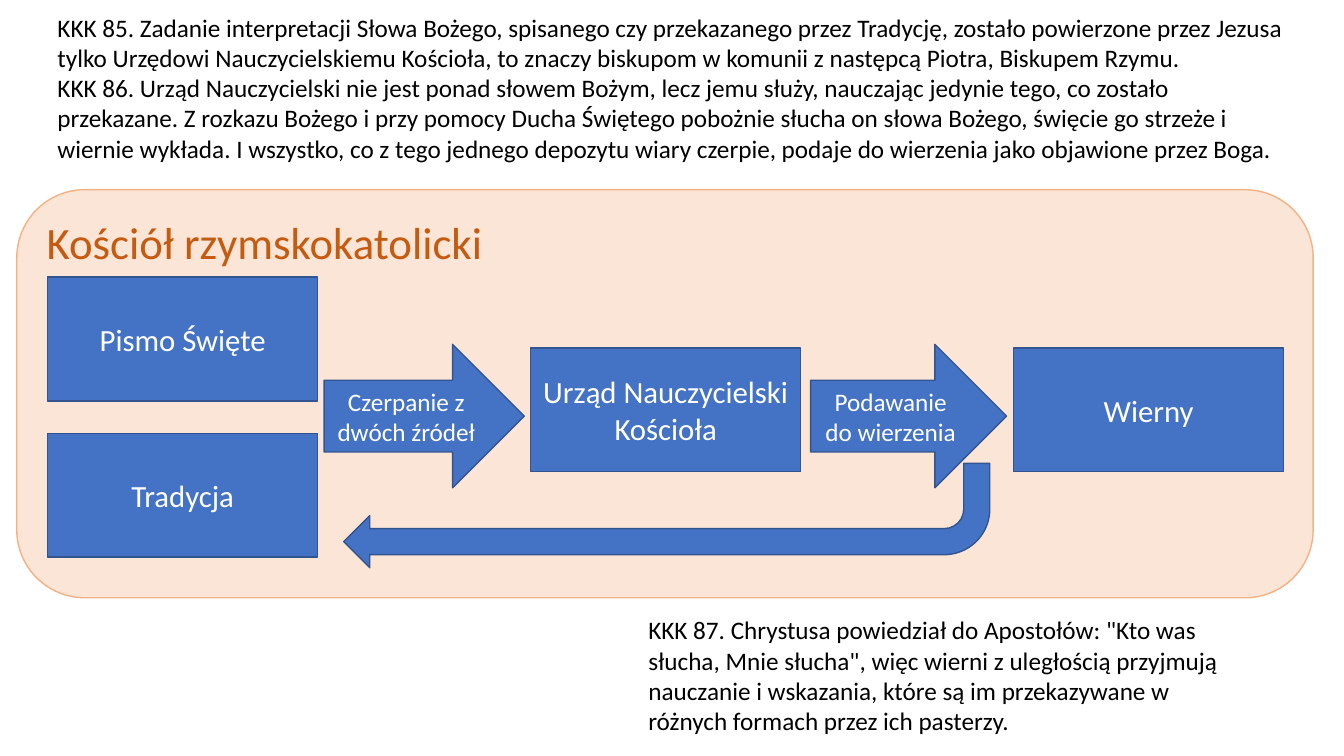
from pptx import Presentation
from pptx.dml.color import RGBColor
from pptx.enum import shapes, text
from pptx.util import Pt

# Content
HEADING = "Kościół rzymskokatolicki"
TEACHING = [
    "KKK 85. Zadanie interpretacji Słowa Bożego, spisanego czy przekazanego przez Tradycję, "
    "zostało powierzone przez Jezusa tylko Urzędowi Nauczycielskiemu Kościoła, to znaczy "
    "biskupom w komunii z następcą Piotra, Biskupem Rzymu.",
    "KKK 86. Urząd Nauczycielski nie jest ponad słowem Bożym, lecz jemu służy, nauczając "
    "jedynie tego, co zostało przekazane. Z rozkazu Bożego i przy pomocy Ducha Świętego "
    "pobożnie słucha on słowa Bożego, święcie go strzeże i wiernie wykłada. I wszystko, co z "
    "tego jednego depozytu wiary czerpie, podaje do wierzenia jako objawione przez Boga.",
]
OBEDIENCE = [
    "KKK 87. Chrystusa powiedział do Apostołów: \"Kto was słucha, Mnie słucha\", więc wierni "
    "z uległością przyjmują nauczanie i wskazania, które są im przekazywane w różnych formach "
    "przez ich pasterzy.",
]
# Label, column, distance above or below the middle row
BOXES = [
    ("Pismo Święte", 0, -50.5),
    ("Tradycja", 0, 61),
    ("Urząd Nauczycielski Kościoła", 1, 0),
    ("Wierny", 2, 0),
]
# Label, left, width
ARROWS = [
    ("Czerpanie z dwóch źródeł", 231.5, 143),
    ("Podawanie do wierzenia", 579, 140),
]

# Style and layout, in points
FONT = "Calibri"
COLORS = {
    "panel": "FBE5D6", "panel_edge": "F4B183", "heading": "C55A11",
    "box": "4472C4", "box_edge": "325491", "label": "FFFFFF", "body": "000000",
}
LEFT, COLUMN_STEP, MIDDLE_TOP = 34, 345, 248.5
BOX_WIDTH, BOX_HEIGHT = 193, 88.5
ARROW_TOP, ARROW_HEIGHT = 246, 102.5

deck = Presentation()
deck.slide_width, deck.slide_height = Pt(960), Pt(540)
page = deck.slides.add_slide(deck.slide_layouts[6])


def color(name):
    return RGBColor.from_string(COLORS[name])


def write(shape, paragraphs, size, ink, align=text.PP_ALIGN.LEFT, anchor=text.MSO_ANCHOR.TOP):
    frame = shape.text_frame
    frame.word_wrap = True
    frame.vertical_anchor = anchor
    for index, words in enumerate(paragraphs):
        para = frame.add_paragraph() if index else frame.paragraphs[0]
        para.alignment = align
        span = para.add_run()
        span.text = words
        span.font.name, span.font.size = FONT, Pt(size)
        span.font.color.rgb = color(ink)


def add_shape(kind, place, fill="box", edge="box_edge"):
    shape = page.shapes.add_shape(kind, *map(Pt, place))
    shape.shadow.inherit = False
    shape.fill.solid()
    shape.fill.fore_color.rgb = color(fill)
    shape.line.color.rgb = color(edge)
    shape.line.width = Pt(1)
    return shape


def add_labelled(kind, place, label, size):
    write(add_shape(kind, place), [label], size, "label",
          text.PP_ALIGN.CENTER, text.MSO_ANCHOR.MIDDLE)


def add_passage(place, paragraphs):
    box = page.shapes.add_textbox(*map(Pt, place))
    write(box, paragraphs, 18, "body")
    box.text_frame.auto_size = text.MSO_AUTO_SIZE.SHAPE_TO_FIT_TEXT


# Panel with its heading
panel = add_shape(shapes.MSO_SHAPE.ROUNDED_RECTANGLE, (12, 135.5, 926, 291.5),
                  "panel", "panel_edge")
write(panel, [HEADING], 32, "heading")

# Boxes of the flow
for label, column, shift in BOXES:
    place = (LEFT + column * COLUMN_STEP, MIDDLE_TOP + shift, BOX_WIDTH, BOX_HEIGHT)
    add_labelled(shapes.MSO_SHAPE.RECTANGLE, place, label, 22)

# Arrows between the boxes
for label, left, width in ARROWS:
    place = (left, ARROW_TOP, width, ARROW_HEIGHT)
    add_labelled(shapes.MSO_SHAPE.RIGHT_ARROW, place, label, 18)

# Arrow leading back to the sources
return_arrow = add_shape(shapes.MSO_SHAPE.BENT_ARROW, (245.5, 331, 461.5, 74.5))
return_arrow.rotation = 180

# Passages above and below the panel
add_passage((LEFT, 5, 895, 116.5), TEACHING)
add_passage((456, 435.5, 445, 94.5), OBEDIENCE)

deck.save("out.pptx")
